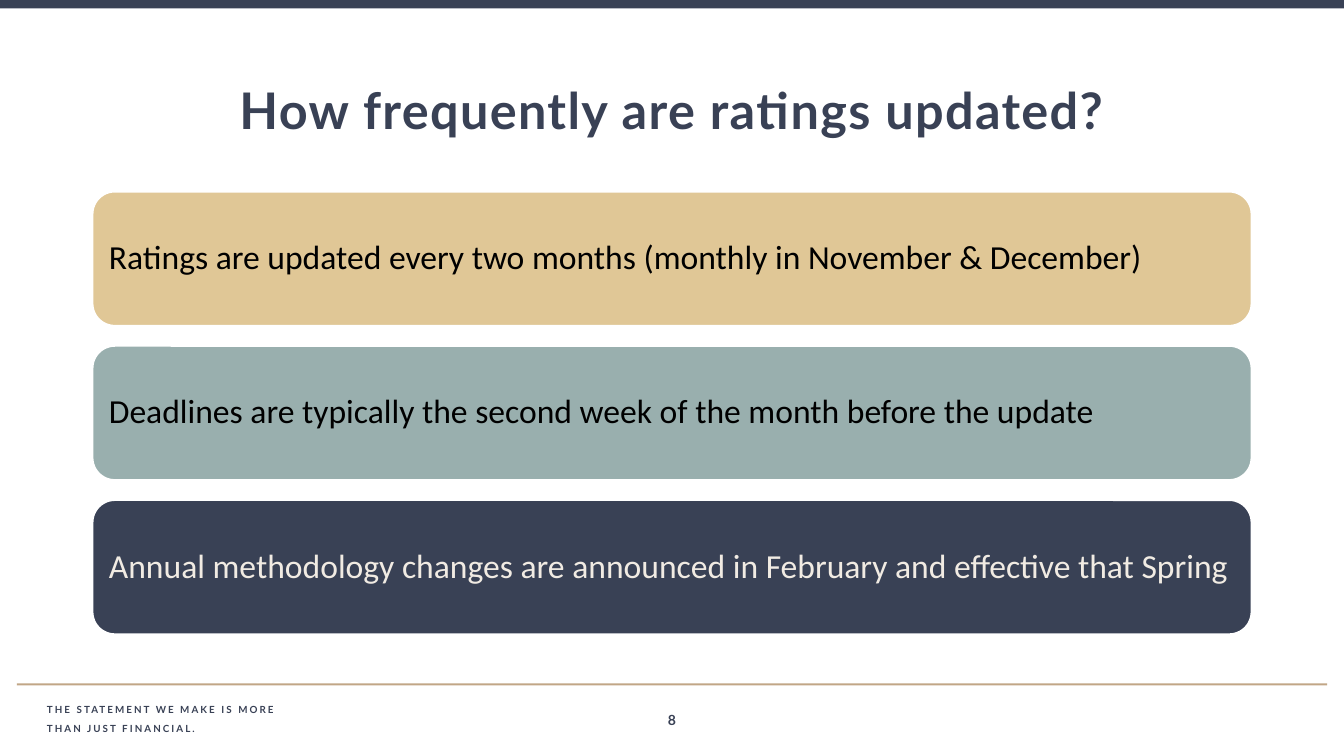
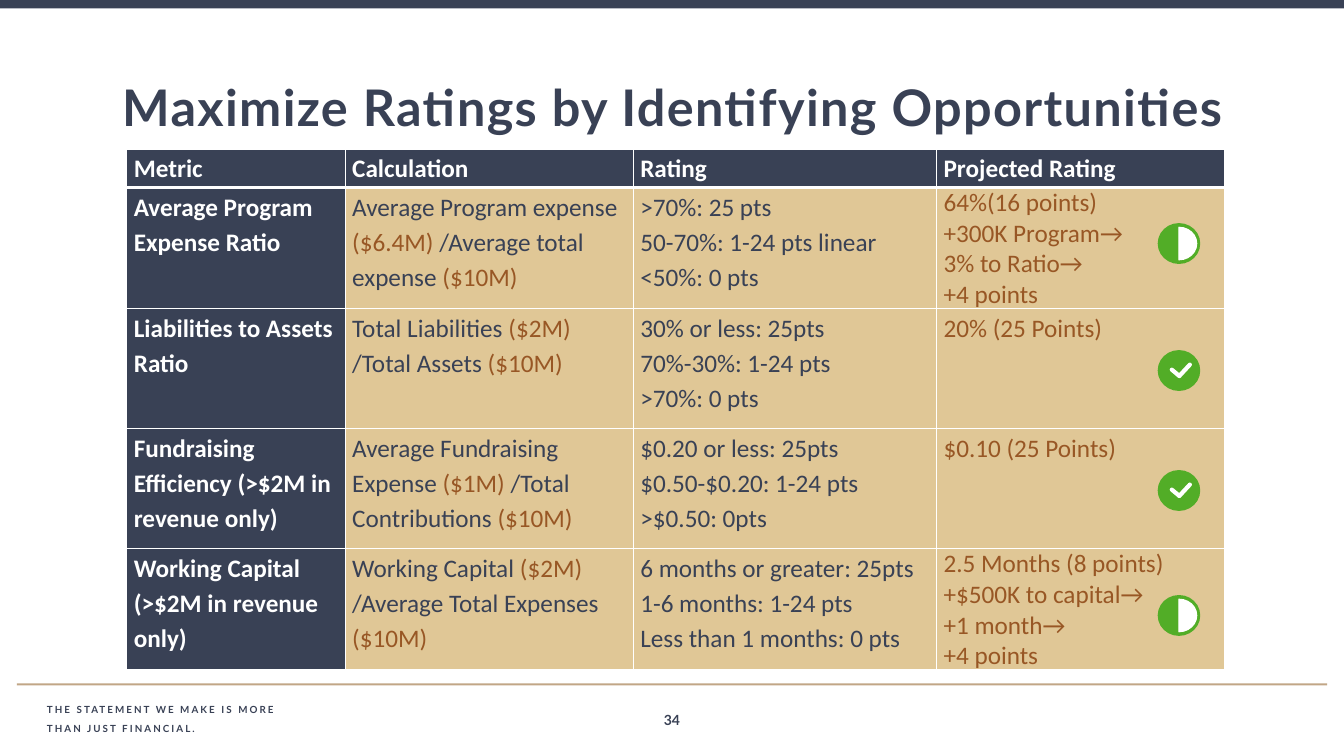
from dataclasses import dataclass

from lxml.etree import SubElement
from pptx import Presentation
from pptx.dml.color import RGBColor
from pptx.enum.shapes import MSO_CONNECTOR, MSO_SHAPE
from pptx.enum.text import MSO_ANCHOR, PP_ALIGN
from pptx.oxml.ns import qn
from pptx.util import Inches, Pt

COLS, ROWS = 160, 90


@dataclass(frozen=True)
class Theme:
    navy: str = "394155"
    sand: str = "E0C796"
    sage: str = "99AFAE"
    cream: str = "F1EBE3"
    rule: str = "C1A686"
    rust: str = "985725"
    green: str = "52AD27"
    white: str = "FFFFFF"
    black: str = "000000"
    head: str = "Lato"
    body: str = "Calibri"
    title: int = 36
    card: int = 24
    cell: int = 18
    page: int = 10
    foot: int = 7


class Deck:
    """Holds the theme and the current slide; lengths are grid columns and rows."""

    def __init__(self, theme):
        self.theme = theme
        self.prs = Presentation()
        self.prs.slide_width = Inches(13.33)
        self.prs.slide_height = Inches(7.5)
        self.slide = None

    def x(self, cols):
        return round(self.prs.slide_width * cols / COLS)

    def y(self, rows):
        return round(self.prs.slide_height * rows / ROWS)

    def box(self, left, top, width, height):
        return self.x(left), self.y(top), self.x(width), self.y(height)

    def start(self, page):
        """Add a slide with its top band, footer rule, tagline and number."""
        t = self.theme
        self.slide = self.prs.slides.add_slide(self.prs.slide_layouts[6])
        self.shape(MSO_SHAPE.RECTANGLE, (0, 0, COLS, 1), t.navy)
        self.shape(MSO_SHAPE.RECTANGLE, (2, 81.36, 156, 0.24), t.rule)
        self.text((76.3, 84.1, 7.4, 3.5), [str(page)], t.page,
                  align=PP_ALIGN.CENTER)
        self.text((4.4, 83.4, 66.8, 4.8),
                  ["THE STATEMENT WE MAKE IS MORE", "THAN JUST FINANCIAL."],
                  t.foot, space=0.9, after=6, track=150)

    def run(self, para, text, size, color, font, bold=False, track=0):
        run = para.add_run()
        run.text = text
        run.font.size = Pt(size)
        run.font.name = font
        run.font.bold = bold
        run.font.color.rgb = RGBColor.from_string(color)
        if track:
            run.font._element.set("spc", str(track))

    def text(self, area, lines, size, align=PP_ALIGN.LEFT, space=1.0,
             after=0, track=0, anchor=MSO_ANCHOR.TOP):
        t = self.theme
        frame = self.slide.shapes.add_textbox(*self.box(*area)).text_frame
        frame.word_wrap = True
        frame.vertical_anchor = anchor
        for i, line in enumerate(lines):
            para = frame.add_paragraph() if i else frame.paragraphs[0]
            para.alignment = align
            para.line_spacing = space
            para.space_after = Pt(after)
            self.run(para, line, size, t.navy, t.head, True, track)

    def title(self, text, area, **style):
        self.text(area, [text], self.theme.title, PP_ALIGN.CENTER,
                  track=100, **style)

    def shape(self, kind, area, fill, line=None, width=1):
        shape = self.slide.shapes.add_shape(kind, *self.box(*area))
        shape.shadow.inherit = False
        shape.fill.solid()
        shape.fill.fore_color.rgb = RGBColor.from_string(fill)
        if line:
            shape.line.color.rgb = RGBColor.from_string(line)
            shape.line.width = Pt(width)
        else:
            shape.line.fill.background()
        return shape

    def card(self, area, text, fill, color):
        t = self.theme
        frame = self.shape(MSO_SHAPE.ROUNDED_RECTANGLE, area, fill,
                           t.white, 1.5).text_frame
        frame.word_wrap = True
        frame.vertical_anchor = MSO_ANCHOR.MIDDLE
        para = frame.paragraphs[0]
        para.alignment = PP_ALIGN.LEFT
        para.line_spacing = 0.9
        self.run(para, text, t.card, color, t.body)

    def line(self, start, end):
        """Draw a white stroke with round ends."""
        line = self.slide.shapes.add_connector(
            MSO_CONNECTOR.STRAIGHT, self.x(start[0]), self.y(start[1]),
            self.x(end[0]), self.y(end[1]))
        line.line.color.rgb = RGBColor.from_string(self.theme.white)
        line.line.width = Pt(3)
        props = line._element.spPr
        props.find(qn("a:ln")).set("cap", "rnd")
        SubElement(props, qn("a:effectLst"))

    def disc(self, left, top):
        t = self.theme
        self.shape(MSO_SHAPE.OVAL, (left, top, 4.9, 4.7), t.green, t.green)

    def tick(self, left, top):
        self.disc(left, top)
        spots = [(left + dx, top + dy)
                 for dx, dy in ((1.6, 2.25), (2.5, 3), (3.75, 1.65))]
        for start, end in zip(spots, spots[1:]):
            self.line(start, end)

    def half(self, left, top):
        """Draw a disc whose right half is white."""
        t = self.theme
        self.disc(left, top)
        chord = self.shape(MSO_SHAPE.CHORD,
                           (left + 0.35, top + 0.43, 4.2, 3.84),
                           t.white, t.white)
        chord.adjustments[0], chord.adjustments[1] = 54, 162
        chord.rotation = 180

    def edge(self, cell, low):
        """Give a cell white borders, the lower one `low` points wide."""
        props = cell._tc.get_or_add_tcPr()
        for side, width in (("L", 1), ("R", 1), ("T", 1), ("B", low)):
            line = SubElement(props, qn(f"a:ln{side}"), w=str(Pt(width)))
            fill = SubElement(line, qn("a:solidFill"))
            SubElement(fill, qn("a:srgbClr"), val=self.theme.white)

    def cell(self, cell, lines, fill, colors, bold, low):
        """Fill a cell; the parts between bars in a line take colors in turn."""
        t = self.theme
        self.edge(cell, low)
        cell.fill.solid()
        cell.fill.fore_color.rgb = RGBColor.from_string(fill)
        cell.margin_left = cell.margin_right = Inches(0.07)
        cell.margin_top = cell.margin_bottom = 0
        for i, line in enumerate(lines):
            frame = cell.text_frame
            para = frame.add_paragraph() if i else frame.paragraphs[0]
            para.line_spacing = 1.0 if len(lines) > 3 else 1.15
            for j, part in enumerate(line.split("|")):
                self.run(para, part, t.cell, colors[j % len(colors)],
                         t.body, bold)

    def table(self, left, top, widths, heights, data):
        t = self.theme
        area = self.box(left, top, sum(widths), sum(heights))
        table = self.slide.shapes.add_table(
            len(heights), len(widths), *area).table
        table.horz_banding = False
        for col, width in zip(table.columns, widths):
            col.width = self.x(width)
        for row, height in zip(table.rows, heights):
            row.height = self.y(height)
        for r, row in enumerate(data):
            for c, text in enumerate(row):
                head = r == 0 or c == 0
                if head:
                    colors = [t.white]
                elif c == len(row) - 1:
                    colors = [t.rust]
                else:
                    colors = [t.navy, t.rust]
                self.cell(table.cell(r, c), text.split("\n"),
                          t.navy if head else t.sand, colors, head,
                          1 if r else 3)


METRICS = [
    ("Metric", "Calculation", "Rating", "Projected Rating"),
    ("Average Program Expense Ratio",
     "Average Program expense |($6.4M) |/Average total expense |($10M)",
     ">70%: 25 pts\n50-70%: 1-24 pts linear\n<50%: 0 pts",
     "64%(16 points)\n+300K Program→\n3% to Ratio→\n+4 points"),
    ("Liabilities to Assets Ratio",
     "Total Liabilities |($2M) |/Total Assets |($10M)",
     "30% or less: 25pts\n70%-30%: 1-24 pts\n>70%: 0 pts",
     "20% (25 Points)"),
    ("Fundraising Efficiency (>$2M in revenue only)",
     "Average Fundraising Expense |($1M) |/Total Contributions |($10M)",
     "$0.20 or less: 25pts\n$0.50-$0.20: 1-24 pts\n>$0.50: 0pts",
     "$0.10 (25 Points)"),
    ("Working Capital (>$2M in revenue only)",
     "Working Capital |($2M)| /Average Total Expenses |($10M)",
     "6 months or greater: 25pts\n1-6 months: 1-24 pts\n"
     "Less than 1 months: 0 pts",
     "2.5 Months (8 points)\n+$500K to capital→\n+1 month→\n+4 points"),
]


def updates(deck):
    t = deck.theme
    deck.start(8)
    deck.title("How frequently are ratings updated?", (11, 4.8, 138, 17.4),
               space=0.9, after=6, anchor=MSO_ANCHOR.MIDDLE)
    cards = [
        ("Ratings are updated every two months "
         "(monthly in November & December)", t.sand, t.black),
        ("Deadlines are typically the second week of the month "
         "before the update", t.sage, t.black),
        ("Annual methodology changes are announced in February "
         "and effective that Spring", t.navy, t.cream),
    ]
    for i, card in enumerate(cards):
        deck.card((11, 22.8 + 18.36 * i, 138, 16), *card)


def metrics(deck):
    deck.start(34)
    deck.title("Maximize Ratings by Identifying Opportunities",
               (7.3, 8.5, 145.7, 8.5))
    deck.table(15.1, 17.76, [26, 34.3, 36.1, 34.3], [4.56] + [14.3] * 4,
               METRICS)
    marks = [(deck.half, 26.64), (deck.tick, 41.76),
             (deck.tick, 56.04), (deck.half, 70.92)]
    for mark, top in marks:
        mark(137.9, top)


def main():
    deck = Deck(Theme())
    updates(deck)
    metrics(deck)
    deck.prs.save("out.pptx")


if __name__ == "__main__":
    main()
